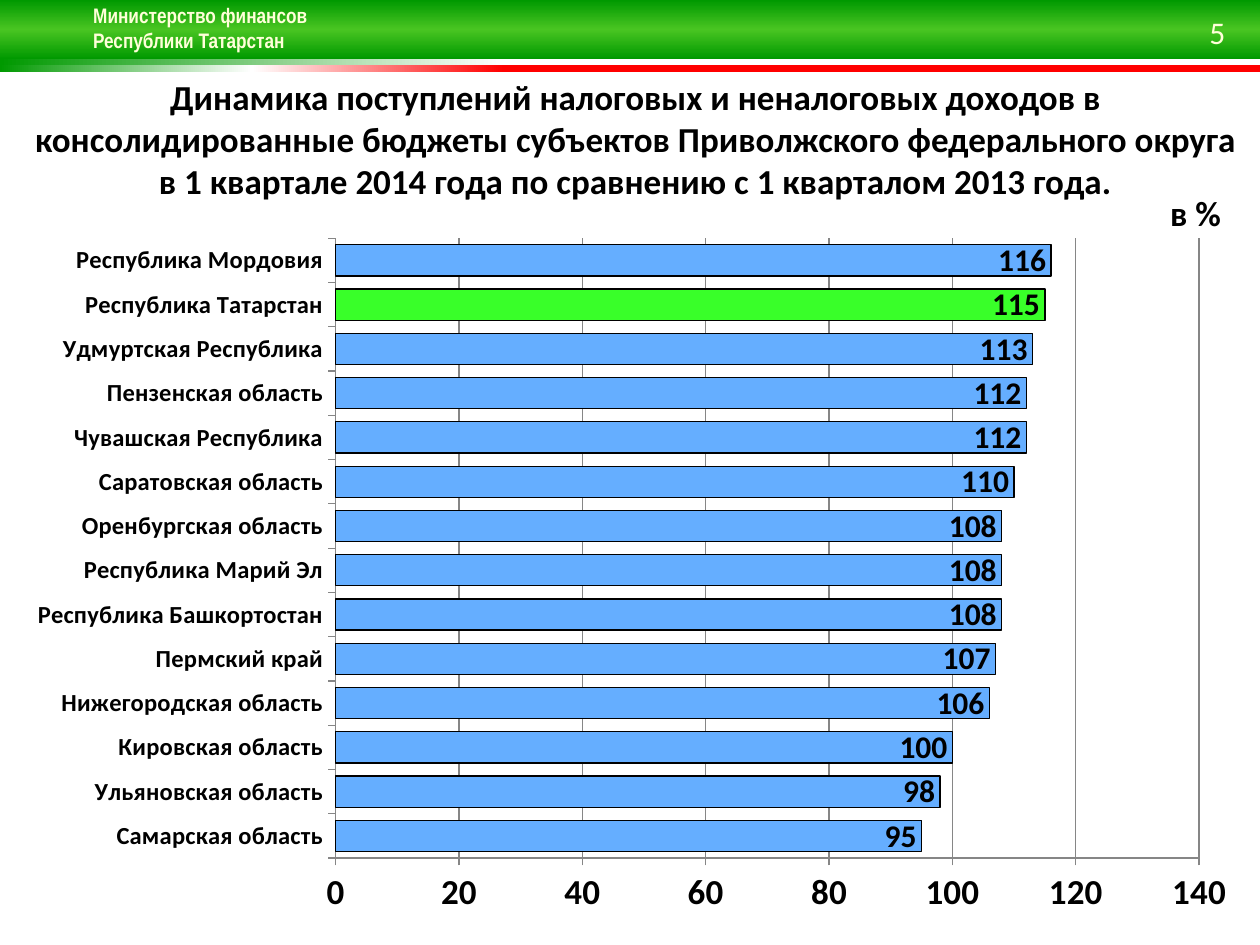
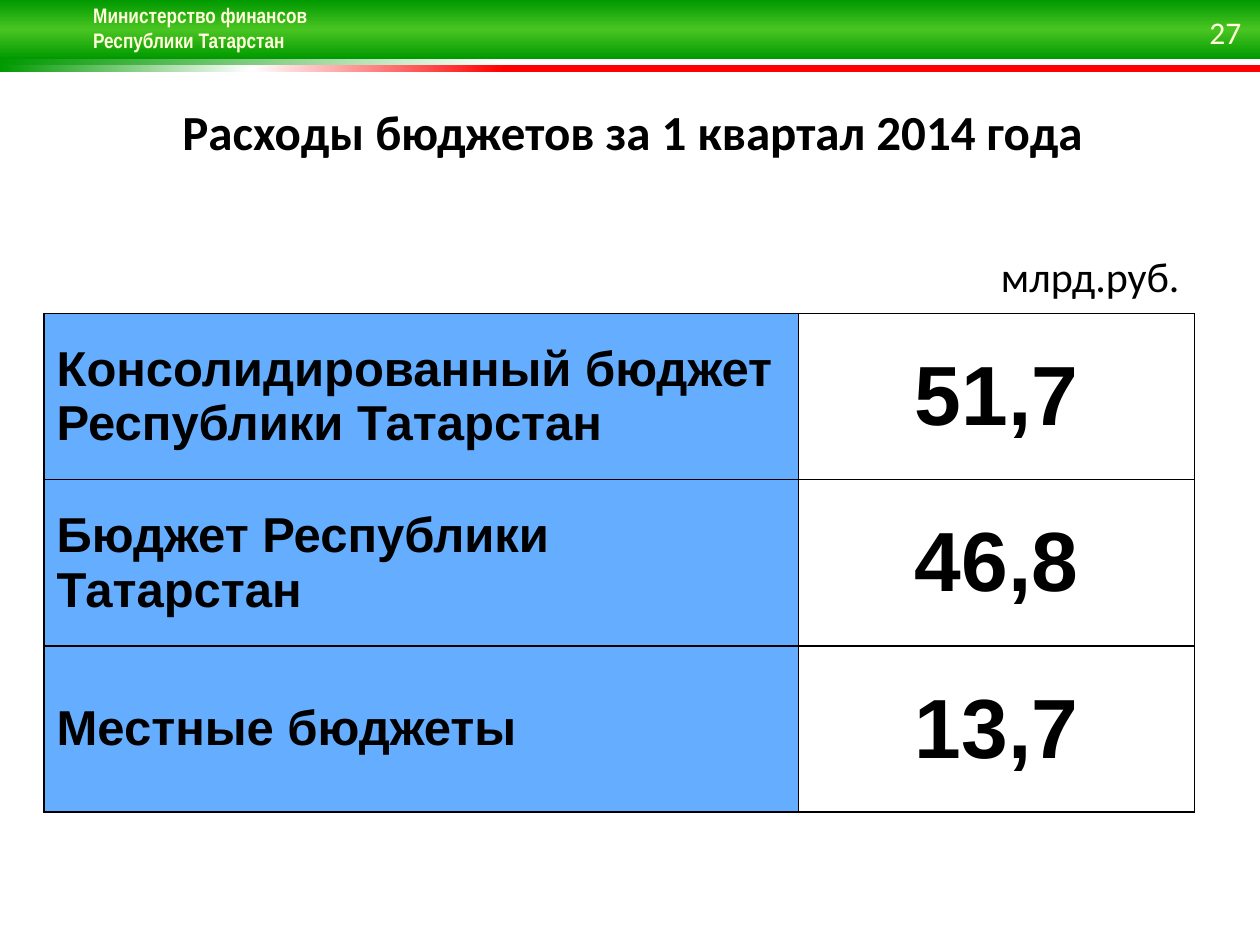
"""Build two budget slides of the Ministry of Finance: a regional bar chart and a spending table."""
from lxml.etree import SubElement
from pptx import Presentation
from pptx.chart.data import CategoryChartData
from pptx.dml.color import RGBColor
from pptx.enum.chart import XL_CHART_TYPE as ChartType, XL_LABEL_POSITION as LabelPosition
from pptx.enum.chart import XL_TICK_MARK as TickMark
from pptx.enum.shapes import MSO_SHAPE as Shape
from pptx.enum.text import MSO_ANCHOR as Anchor, PP_ALIGN as Align
from pptx.oxml.ns import qn
from pptx.util import Cm, Pt

BLACK = RGBColor(0, 0, 0)
WHITE = RGBColor(255, 255, 255)
CREAM = RGBColor(0xFF, 0xFF, 0xD9)
GREEN = RGBColor(0, 0x99, 0)
LIGHT_GREEN = RGBColor(0x49, 0xC5, 0x22)
RED = RGBColor(255, 0, 0)
BLUE = RGBColor(0x65, 0xAE, 0xFF)
HIGHLIGHT = RGBColor(0x39, 0xFF, 0x29)
GRAY = RGBColor(0x86, 0x86, 0x86)

MINISTRY = "Министерство финансов\vРеспублики Татарстан"
BANDS = [
    (1.19, 0.13, 0, [(0, GREEN), (40, WHITE), (100, WHITE)]),
    (1.32, 0.13, 0, [(0, GREEN), (20, WHITE), (40, RED)]),
    (0, 1.19, 90, [(0, GREEN), (50, LIGHT_GREEN), (100, GREEN)]),
]

GROWTH_TITLE = (
    "Динамика поступлений налоговых и неналоговых доходов в "
    "консолидированные бюджеты субъектов Приволжского федерального округа "
    "в 1 квартале 2014 года по сравнению с 1 кварталом 2013 года."
)
HOME_REGION = "Республика Татарстан"
GROWTH = {
    "Самарская область": 95,
    "Ульяновская область": 98,
    "Кировская область": 100,
    "Нижегородская область": 106,
    "Пермский край": 107,
    "Республика Башкортостан": 108,
    "Республика Марий Эл": 108,
    "Оренбургская область": 108,
    "Саратовская область": 110,
    "Чувашская Республика": 112,
    "Пензенская область": 112,
    "Удмуртская Республика": 113,
    HOME_REGION: 115,
    "Республика Мордовия": 116,
}
PLOT_LAYOUT = {"x": 0.26, "y": 0.02, "w": 0.7, "h": 0.88}

SPENDING_TITLE = "Расходы бюджетов за 1 квартал 2014 года"
SPENDING = [
    ("Консолидированный бюджет Республики Татарстан", "51,7"),
    ("Бюджет Республики Татарстан", "46,8"),
    ("Местные бюджеты", "13,7"),
]
COLUMN_WIDTHS = (15.21, 7.98)
ROW_HEIGHT = 3.35


def set_font(font, size, color=BLACK, bold=True, name="Calibri"):
    for key, value in {"size": Pt(size), "bold": bold, "name": name}.items():
        setattr(font, key, value)
    font.color.rgb = color


def add_text(page, text, place, size, align=Align.LEFT, **style):
    box = page.shapes.add_textbox(*map(Cm, place))
    box.text_frame.word_wrap = True
    para = box.text_frame.paragraphs[0]
    para.text = text
    para.alignment = align
    for span in para.runs:
        set_font(span.font, size, **style)
    return para


def add_text_shadow(span):
    fill = span.font._element.find(qn("a:solidFill"))
    effects = SubElement(span.font._element, qn("a:effectLst"))
    shadow = SubElement(effects, qn("a:outerShdw"), blurRad="38100", dist="38100", dir="2700000")
    SubElement(shadow, qn("a:srgbClr"), val=str(BLACK))
    fill.addnext(effects)


def add_band(page, top, height, angle, stops):
    band = page.shapes.add_shape(Shape.RECTANGLE, 0, Cm(top), Cm(25.4), Cm(height))
    band.shadow.inherit = False
    band.line.fill.background()
    band.fill.gradient()
    band.fill.gradient_angle = angle
    stop_list = band._element.spPr.find(".//" + qn("a:gsLst"))
    stop_list.clear()
    for position, color in stops:
        stop = SubElement(stop_list, qn("a:gs"), pos=str(position * 1000))
        SubElement(stop, qn("a:srgbClr"), val=str(color))


def add_page(deck, number):
    page = deck.slides.add_slide(deck.slide_layouts[6])
    for band in BANDS:
        add_band(page, *band)
    ministry = add_text(page, MINISTRY, (1.63, -0.08, 5.2, 1.8), 12, color=CREAM, name="Arial Narrow")
    for span in ministry.runs:
        add_text_shadow(span)
    add_text(page, str(number), (24.13, 0.13, 1.25, 0.86), 18, color=CREAM, bold=False)
    return page


def style_axis(axis, size):
    axis.major_tick_mark = TickMark.OUTSIDE
    axis.minor_tick_mark = TickMark.NONE
    axis.format.line.color.rgb = GRAY
    set_font(axis.tick_labels.font, size)


def add_growth_chart(page):
    data = CategoryChartData(number_format="0")
    data.categories = list(GROWTH)
    data.add_series("Series 1", list(GROWTH.values()))
    place = map(Cm, (0.3, 4.52, 24.87, 14.2))
    chart = page.shapes.add_chart(ChartType.BAR_STACKED, *place, data).chart
    chart.has_legend = chart.has_title = False
    set_font(chart.font, 18, bold=False)

    style_axis(chart.category_axis, 14)
    chart.category_axis.has_major_gridlines = False
    scale = chart.value_axis
    style_axis(scale, 20)
    for key, value in {"minimum_scale": 0, "maximum_scale": 140, "major_unit": 20}.items():
        setattr(scale, key, value)
    scale.major_gridlines.format.line.color.rgb = GRAY

    plot = chart.plots[0]
    for key, value in {"gap_width": 42, "overlap": 100, "vary_by_categories": False}.items():
        setattr(plot, key, value)
    bars = plot.series[0]
    home_bar = bars.points[list(GROWTH).index(HOME_REGION)]
    for part, color in ((bars, BLUE), (home_bar, HIGHLIGHT)):
        part.format.fill.solid()
        part.format.fill.fore_color.rgb = color
        part.format.line.color.rgb = BLACK
        part.format.line.width = Pt(0.75)
    labels = bars.data_labels
    labels.show_value = True
    labels.position = LabelPosition.INSIDE_END
    set_font(labels.font, 18)

    plot_area = chart._chartSpace.chart.plotArea
    for old in plot_area.findall(qn("c:layout")):
        plot_area.remove(old)
    layout = SubElement(plot_area, qn("c:layout"))
    plot_area.insert(0, layout)
    manual = SubElement(layout, qn("c:manualLayout"))
    SubElement(manual, qn("c:layoutTarget"), val="inner")
    for side in "xy":
        SubElement(manual, qn(f"c:{side}Mode"), val="edge")
    for key, value in PLOT_LAYOUT.items():
        SubElement(manual, qn(f"c:{key}"), val=str(value))


def add_borders(cell):
    properties = cell._tc.get_or_add_tcPr()
    for index, side in enumerate(("lnL", "lnR", "lnT", "lnB")):
        line = SubElement(properties, qn(f"a:{side}"), w=str(Pt(1)))
        fill = SubElement(line, qn("a:solidFill"))
        SubElement(fill, qn("a:srgbClr"), val=str(BLACK))
        properties.insert(index, line)


def add_spending_table(page):
    place = map(Cm, (0.89, 6.32, sum(COLUMN_WIDTHS), ROW_HEIGHT * len(SPENDING)))
    table = page.shapes.add_table(len(SPENDING), len(COLUMN_WIDTHS), *place).table
    table.first_row = table.horz_banding = False
    for column, width in zip(table.columns, COLUMN_WIDTHS):
        column.width = Cm(width)
    for row, texts in zip(table.rows, SPENDING):
        row.height = Cm(ROW_HEIGHT)
        for cell, text, size, align, color in zip(
            row.cells, texts, (28, 48), (Align.LEFT, Align.CENTER), (BLUE, WHITE)
        ):
            cell.text = text
            cell.vertical_anchor = Anchor.MIDDLE
            cell.fill.solid()
            cell.fill.fore_color.rgb = color
            para = cell.text_frame.paragraphs[0]
            para.alignment = align
            set_font(para.runs[0].font, size, name="Arial")
            add_borders(cell)


def main():
    deck = Presentation()
    deck.slide_width, deck.slide_height = Cm(25.4), Cm(19.05)

    page = add_page(deck, 5)
    add_growth_chart(page)
    add_text(page, GROWTH_TITLE, (0.23, 1.4, 25.17, 3.6), 20, Align.CENTER)
    add_text(page, "в %", (23.34, 3.73, 1.8, 1.12), 20)

    page = add_page(deck, 27)
    add_text(page, SPENDING_TITLE, (0.05, 1.93, 25.4, 1.73), 28, Align.CENTER)
    add_spending_table(page)
    add_text(page, "млрд.руб.", (19, 4.93, 5.03, 1.27), 24, Align.RIGHT, bold=False)

    deck.save("out.pptx")


if __name__ == "__main__":
    main()
